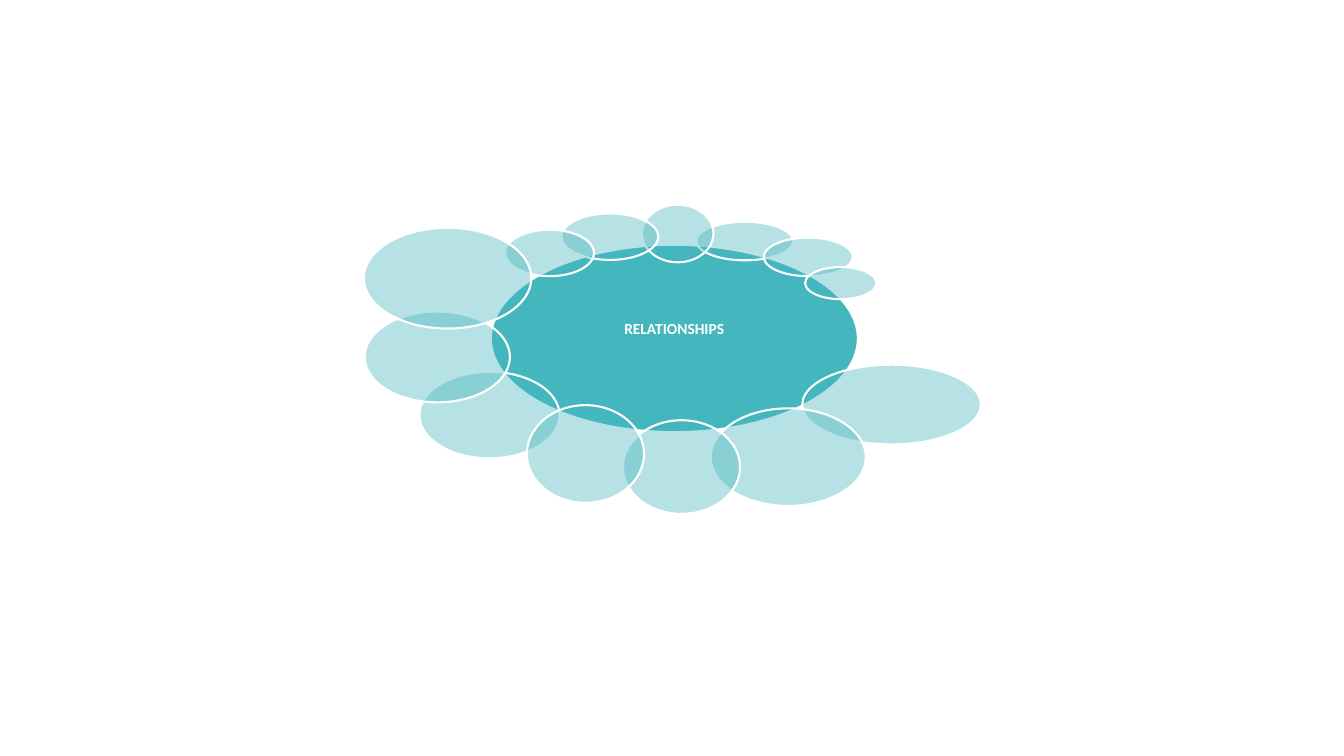
from pptx import Presentation
from pptx.dml.color import RGBColor
from pptx.enum.shapes import MSO_SHAPE as Shape
from pptx.enum.text import MSO_ANCHOR as Anchor, PP_ALIGN as Align
from pptx.oxml.ns import qn
from pptx.util import Cm, Pt
from lxml.etree import SubElement

COLORS = {"teal": "44B6BD", "white": "FFFFFF"}
SATELLITE_OPACITY = 39

deck = Presentation()
deck.slide_width, deck.slide_height = Cm(33.87), Cm(19.05)
page = deck.slides.add_slide(deck.slide_layouts[6])


def add_oval(bounds, opacity=100):
    oval = page.shapes.add_shape(Shape.OVAL, *map(Cm, bounds))
    oval.shadow.inherit = False
    oval.fill.solid()
    oval.fill.fore_color.rgb = RGBColor.from_string(COLORS["teal"])
    oval.line.color.rgb = RGBColor.from_string(COLORS["white"])
    oval.line.width = Pt(1.5)
    if opacity < 100:
        color = oval.fill._xPr.find(qn("a:solidFill"))[0]
        SubElement(color, qn("a:alpha"), val=str(opacity * 1000))
    return oval


def write_text(box, text, *, font="Calibri", size=11, color="white", bold=False):
    frame = box.text_frame
    frame.word_wrap = True
    frame.vertical_anchor = Anchor.MIDDLE
    frame.margin_left = frame.margin_right = frame.margin_top = 0
    frame.margin_bottom = Cm(0.43)
    para = frame.paragraphs[0]
    para.alignment = Align.CENTER
    para.line_spacing = 0.9
    span = para.add_run()
    span.text = text
    span.font.name = font
    span.font.size = Pt(size)
    span.font.bold = bold
    span.font.color.rgb = RGBColor.from_string(COLORS[color])


center = add_oval((12.37, 6.17, 9.25, 4.72))
write_text(center, "RELATIONSHIPS", bold=True)

satellites = [
    (20.22, 9.19, 4.5, 2.01),
    (17.91, 10.29, 3.91, 2.46),
    (10.57, 9.37, 3.53, 2.18),
    (15.7, 10.59, 2.95, 2.36),
    (13.28, 10.21, 2.95, 2.46),
    (9.19, 7.85, 3.66, 2.29),
    (17.55, 5.59, 2.44, 0.97),
    (16.18, 5.16, 1.8, 1.45),
    (19.25, 5.99, 2.24, 0.97),
    (20.29, 6.73, 1.8, 0.81),
    (14.15, 5.38, 2.44, 1.17),
    (12.73, 5.79, 2.24, 1.17),
    (9.17, 5.74, 4.22, 2.54),
]
for bounds in satellites:
    add_oval(bounds, SATELLITE_OPACITY)

deck.save("out.pptx")
